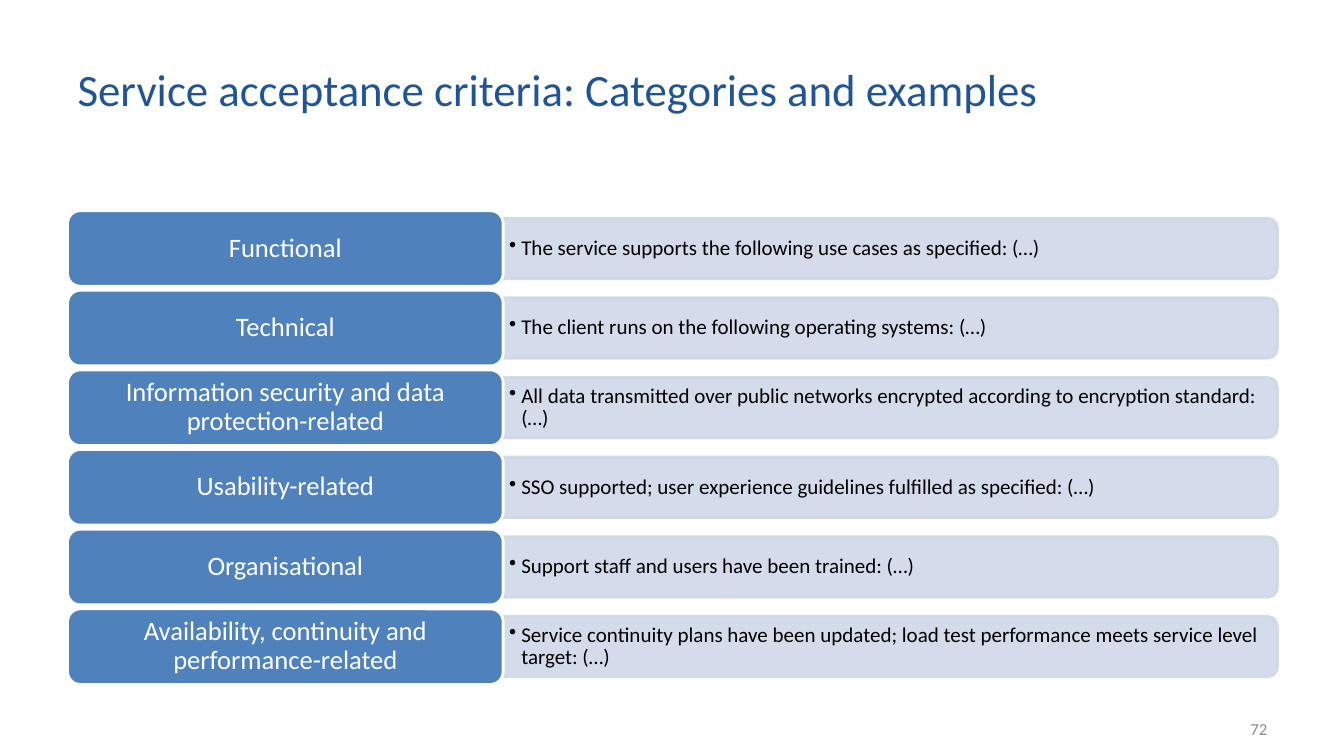
from lxml import etree
from pptx import Presentation
from pptx import util as u
from pptx.dml.color import RGBColor
from pptx.enum import shapes, text
from pptx.oxml.ns import qn

TITLE_BLUE = RGBColor(0x20, 0x55, 0x95)
LABEL_BLUE = RGBColor(0x4F, 0x81, 0xBD)
PALE_BLUE = RGBColor(0xD0, 0xD8, 0xE8)
GREY = RGBColor(0x8C, 0x8C, 0x8C)
WHITE = RGBColor(0xFF, 0xFF, 0xFF)
BLACK = RGBColor(0x00, 0x00, 0x00)

CRITERIA = [
    ("Functional", "The service supports the following use cases as specified: (…)"),
    ("Technical", "The client runs on the following operating systems: (…)"),
    ("Information security and data protection-related",
     "All data transmitted over public networks encrypted according to encryption standard: (…)"),
    ("Usability-related", "SSO supported; user experience guidelines fulfilled as specified: (…)"),
    ("Organisational", "Support staff and users have been trained: (…)"),
    ("Availability, continuity and performance-related",
     "Service continuity plans have been updated; load test performance meets service level target: (…)"),
]

LEFT = 0.67
FIRST_TOP = 2.09
ROW_STEP = 0.79
LABEL_WIDTH = 4.32
LABEL_HEIGHT = 0.75
BAND_WIDTH = 7.68
BAND_HEIGHT = 0.6
EXAMPLE_HEIGHT = 0.54


class CriteriaPage:
    font = "Calibri"

    def __init__(self, deck):
        self.page = deck.slides.add_slide(deck.slide_layouts[5])

    def set_text(self, box, words, size, color, align, margins=(0.1, 0.05), spacing=1.0, bullet=False):
        frame = box.text_frame
        frame.word_wrap = True
        frame.auto_size = text.MSO_AUTO_SIZE.NONE
        frame.vertical_anchor = text.MSO_ANCHOR.MIDDLE
        frame.margin_left = frame.margin_right = u.Inches(margins[0])
        frame.margin_top = frame.margin_bottom = u.Inches(margins[1])
        para = frame.paragraphs[0]
        para.alignment = align
        para.line_spacing = spacing
        if bullet:
            properties = para._p.get_or_add_pPr()
            properties.set("marL", str(u.Inches(0.12)))
            properties.set("indent", str(u.Inches(-0.12)))
            etree.SubElement(properties, qn("a:buChar")).set("char", "•")
        span = para.add_run()
        span.text = words
        span.font.name = self.font
        span.font.size = u.Pt(size)
        span.font.color.rgb = color

    def title(self, words):
        box = self.page.shapes.title
        box.left, box.top = u.Inches(LEFT), u.Inches(0.3)
        box.width, box.height = u.Inches(9.91), u.Inches(1.15)
        self.set_text(box, words, 32, TITLE_BLUE, text.PP_ALIGN.LEFT)

    def text_box(self, left, top, width, height, words, size, color, align, **style):
        box = self.page.shapes.add_textbox(
            u.Inches(left), u.Inches(top), u.Inches(width), u.Inches(height))
        self.set_text(box, words, size, color, align, **style)

    def shape(self, kind, left, top, width, height, fill, line):
        box = self.page.shapes.add_shape(
            kind, u.Inches(left), u.Inches(top), u.Inches(width), u.Inches(height))
        box.shadow.inherit = False
        box.fill.solid()
        box.fill.fore_color.rgb = fill
        box.line.color.rgb = line
        box.line.width = u.Pt(2)
        return box

    def band(self, left, middle):
        box = self.shape(
            shapes.MSO_SHAPE.ROUND_2_SAME_RECTANGLE,
            left + (BAND_WIDTH - BAND_HEIGHT) / 2, middle - BAND_WIDTH / 2,
            BAND_HEIGHT, BAND_WIDTH, PALE_BLUE, PALE_BLUE)
        box.rotation = 90
        for color in box._element.spPr.iter(qn("a:srgbClr")):
            etree.SubElement(color, qn("a:alpha")).set("val", "90000")

    def criterion(self, top, category, example):
        middle = top + LABEL_HEIGHT / 2
        split = LEFT + LABEL_WIDTH
        self.band(split, middle)
        self.text_box(
            split, middle - EXAMPLE_HEIGHT / 2, 7.65, EXAMPLE_HEIGHT, example, 15, BLACK,
            text.PP_ALIGN.LEFT, margins=(0.06, 0.03), spacing=0.9, bullet=True)
        label = self.shape(
            shapes.MSO_SHAPE.ROUNDED_RECTANGLE, LEFT, top, LABEL_WIDTH, LABEL_HEIGHT,
            LABEL_BLUE, WHITE)
        self.set_text(label, category, 19, WHITE, text.PP_ALIGN.CENTER,
                      margins=(0.08, 0.04), spacing=0.9)


def main():
    deck = Presentation()
    deck.slide_width, deck.slide_height = u.Inches(13.33), u.Inches(7.5)
    page = CriteriaPage(deck)
    page.title("Service acceptance criteria: Categories and examples")
    for row, (category, example) in enumerate(CRITERIA):
        page.criterion(FIRST_TOP + row * ROW_STEP, category, example)
    page.text_box(9.56, 7.03, 3.11, 0.4, "72", 12, GREY, text.PP_ALIGN.RIGHT)
    deck.save("out.pptx")


if __name__ == "__main__":
    main()
